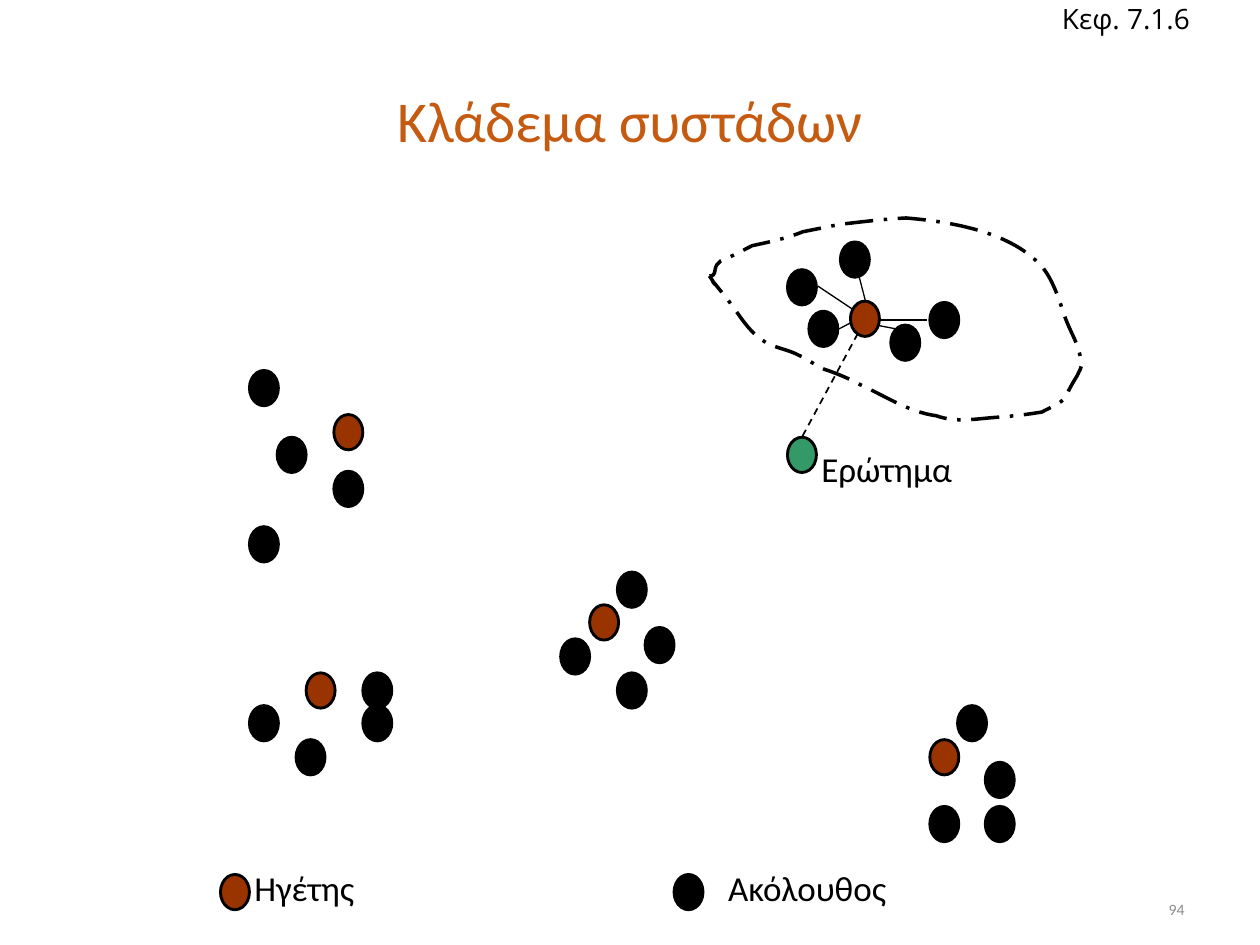
from pptx import Presentation
from pptx import util as u
from pptx.dml.color import RGBColor
from pptx.enum import dml, shapes, text
from lxml import etree

PX = u.Inches(1) // 100  # 100 px to the inch
DOT_W, DOT_H = 23, 28
BLACK = RGBColor(0x00, 0x00, 0x00)
LEADER = RGBColor(0x99, 0x33, 0x00)
QUERY = RGBColor(0x33, 0x99, 0x66)
TITLE = RGBColor(0xC5, 0x5A, 0x11)
GREY = RGBColor(0x8C, 0x8C, 0x8C)
A = "{http://schemas.openxmlformats.org/drawingml/2006/main}"

# left, top, leader, followers
CLUSTERS = [
    (198, 294, (67, 35), [(0, 0), (22, 53), (67, 80), (0, 124)]),
    (198, 534, (45, 0), [(0, 26), (37, 53), (90, 0), (90, 26)]),
    (445, 454, (23, 26), [(45, 0), (0, 53), (67, 44), (45, 80)]),
    (738, 560, (0, 27), [(22, 0), (44, 45), (0, 80), (44, 80)]),
]
NEAR_FOLLOWERS = [(71, 41), (88, 74), (153, 85), (184, 67), (113, 19)]
SPOKES = [
    ((136, 84), (157, 88)),
    ((138, 81), (182, 81)),
    ((136, 78), (128, 47)),
    ((131, 78), (95, 54)),
    ((131, 78), (112, 88)),
]
OUTLINE_W, OUTLINE_H = 305, 162
OUTLINE_START = (9, 46)
OUTLINE_CURVES = [  # two control points and an end point each
    ((22, 65), (0, 35), (22, 63)),
    ((32, 75), (38, 88), (51, 97)),
    ((59, 103), (71, 104), (80, 109)),
    ((87, 112), (93, 117), (100, 120)),
    ((109, 123), (119, 127), (128, 132)),
    ((148, 141), (167, 154), (189, 157)),
    ((206, 163), (222, 159), (240, 158)),
    ((252, 157), (261, 156), (273, 154)),
    ((280, 150), (287, 148), (292, 142)),
    ((294, 136), (301, 125), (301, 125)),
    ((302, 122), (305, 119), (304, 115)),
    ((303, 101), (295, 90), (291, 78)),
    ((287, 66), (282, 50), (274, 40)),
    ((250, 11), (201, 3), (165, 0)),
    ((146, 1), (131, 3), (113, 5)),
    ((103, 7), (93, 9), (83, 11)),
    ((71, 16), (57, 19), (43, 22)),
    ((35, 26), (26, 31), (18, 34)),
    ((17, 36), (15, 36), (15, 37)),
    ((12, 42), (15, 46), (9, 46)),
]


def add_text(page, words, left, top, width, height, *, size=20, font="Calibri",
             color=BLACK, align=text.PP_ALIGN.LEFT, anchor=text.MSO_ANCHOR.TOP,
             wrap=False, spacing=None):
    box = page.shapes.add_textbox(left * PX, top * PX, width * PX, height * PX)
    frame = box.text_frame
    frame.word_wrap = wrap
    frame.vertical_anchor = anchor
    para = frame.paragraphs[0]
    para.alignment = align
    para.line_spacing = spacing
    span = para.add_run()
    span.text = words
    span.font.name = font
    span.font.size = u.Pt(size)
    span.font.color.rgb = color


def add_dot(page, left, top, color=BLACK):
    dot = page.shapes.add_shape(shapes.MSO_SHAPE.OVAL, left * PX, top * PX,
                                DOT_W * PX, DOT_H * PX)
    dot.shadow.inherit = False
    dot.fill.solid()
    dot.fill.fore_color.rgb = color
    dot.line.color.rgb = BLACK
    dot.line.width = u.Pt(1.63)


def add_line(page, left, top, start, end, width=0.75, dash=None):
    line = page.shapes.add_connector(
        shapes.MSO_CONNECTOR.STRAIGHT,
        (left + start[0]) * PX, (top + start[1]) * PX,
        (left + end[0]) * PX, (top + end[1]) * PX)
    line.line.color.rgb = BLACK
    line.line.width = u.Pt(width)
    if dash:
        line.line.dash_style = dash
    etree.SubElement(line._element.spPr, A + "effectLst")


def bend_segments(outline, start, curves):
    """Turn the straight segments into curves, in px of the outline's box."""
    track = next(outline._element.iter(A + "path"))
    track.set("w", str(OUTLINE_W))
    track.set("h", str(OUTLINE_H))
    origin = next(track.iter(A + "pt"))
    origin.set("x", str(start[0]))
    origin.set("y", str(start[1]))
    for segment, points in zip(track.findall(A + "lnTo"), curves):
        curve = etree.Element(A + "cubicBezTo")
        for x, y in points:
            etree.SubElement(curve, A + "pt", x=str(x), y=str(y))
        track.replace(segment, curve)


def add_outline(page, left, top):
    builder = page.shapes.build_freeform(*OUTLINE_START, scale=PX)
    builder.add_line_segments([curve[-1] for curve in OUTLINE_CURVES], close=True)
    outline = builder.convert_to_shape()
    bend_segments(outline, OUTLINE_START, OUTLINE_CURVES)
    outline.left, outline.top = left * PX, top * PX
    outline.width, outline.height = OUTLINE_W * PX, OUTLINE_H * PX
    outline.shadow.inherit = False
    outline.fill.background()
    outline.line.color.rgb = BLACK
    outline.line.width = u.Pt(2)
    outline.line.dash_style = dml.MSO_LINE.LONG_DASH_DOT


def add_cluster(page, left, top, leader, followers):
    for x, y in followers:
        add_dot(page, left + x, top + y)
    add_dot(page, left + leader[0], top + leader[1], LEADER)


def add_query_region(page, left, top):
    """The cluster nearest to the query, with its outline and links."""
    add_dot(page, left + 71, top + 174, QUERY)
    add_text(page, "Ερώτημα", left + 88, top + 177, 125, 44)
    for start, end in SPOKES:
        add_line(page, left, top, start, end)
    add_line(page, left, top, (83, 173), (131, 84), 1, dml.MSO_LINE.DASH)
    add_outline(page, left, top)
    add_cluster(page, left, top, (121, 66), NEAR_FOLLOWERS)


def add_legend(page, left, top):
    add_dot(page, left, top + 11, LEADER)
    add_text(page, "Ηγέτης", left + 17, top, 100, 44)
    add_dot(page, left + 360, top + 11)
    add_text(page, "Ακόλουθος", left + 393, top, 148, 44)


def add_headings(page):
    middle = text.MSO_ANCHOR.MIDDLE
    add_text(page, "Κεφ. 7.1.6", 833, -4, 131, 37, size=16, font="Open Sans",
             anchor=middle)
    add_text(page, "Κλάδεμα συστάδων", 50, 42, 900, 113, size=33, color=TITLE,
             align=text.PP_ALIGN.CENTER, anchor=middle, wrap=True, spacing=0.9)
    add_text(page, "94", 717, 708, 233, 27, size=9, color=GREY,
             align=text.PP_ALIGN.RIGHT, anchor=middle, wrap=True)


def main():
    deck = Presentation()
    deck.slide_width, deck.slide_height = 1000 * PX, 750 * PX
    page = deck.slides.add_slide(deck.slide_layouts[6])
    for cluster in CLUSTERS:
        add_cluster(page, *cluster)
    add_query_region(page, 554, 173)
    add_legend(page, 175, 683)
    add_headings(page)
    deck.save("out.pptx")


if __name__ == "__main__":
    main()
